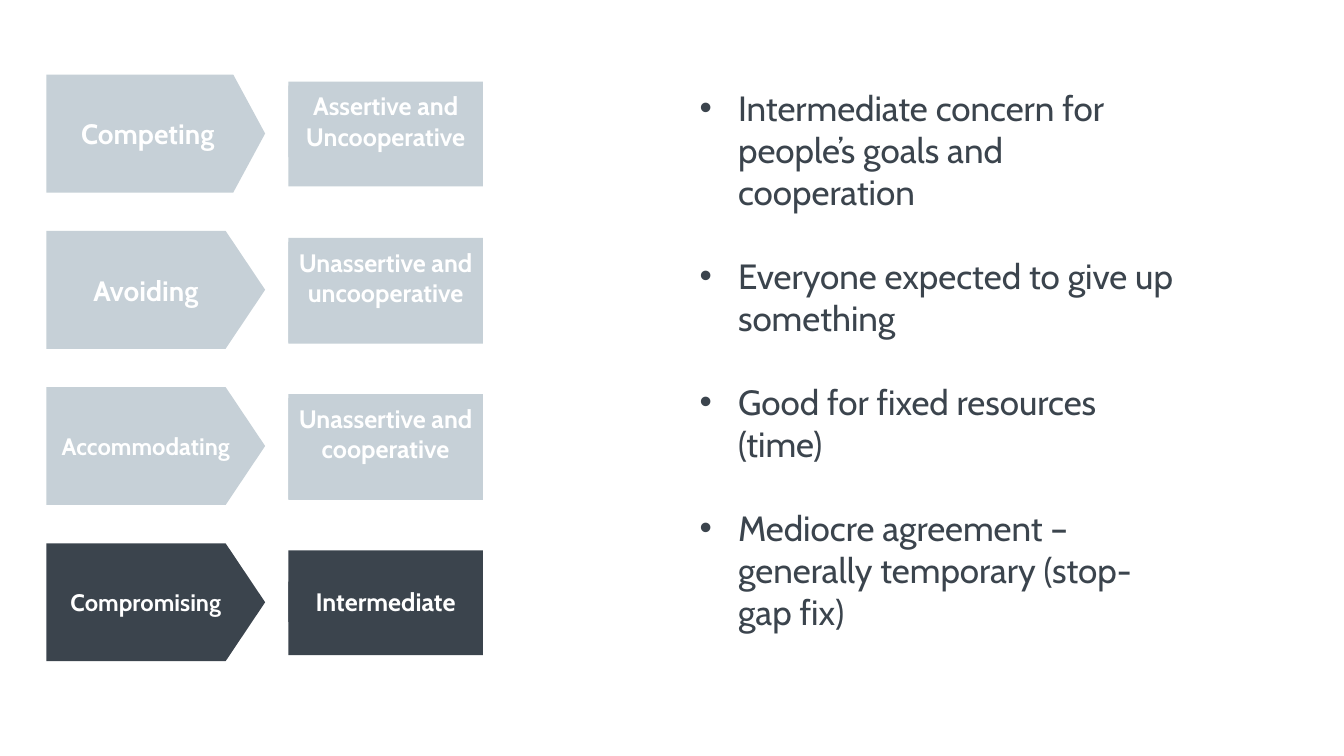
from dataclasses import dataclass

from lxml.etree import SubElement as SubEl
from pptx import Presentation
from pptx.dml.color import RGBColor as Color
from pptx.enum.shapes import MSO_SHAPE as Shape
from pptx.enum.text import MSO_ANCHOR as Anchor, MSO_AUTO_SIZE as Fit, PP_ALIGN as Align
from pptx.oxml.ns import qn
from pptx.util import Inches, Pt


@dataclass(frozen=True)
class Theme:
    font: str = "Cabin"
    pale: str = "C6D0D7"
    dark: str = "3B444D"
    white: str = "FFFFFF"
    large: int = 20
    small: int = 17
    note: int = 18
    list: int = 25
    gap: int = 30


@dataclass(frozen=True)
class Style:
    name: str
    trait: str
    size: int
    fill: str
    point: float = 0.335
    drop: float = 0.11
    tall: float = 1.01


THEME = Theme()
STYLES = [
    Style("Competing", "Assertive and Uncooperative", THEME.large, THEME.pale, point=0.27, tall=0.71),
    Style("Avoiding", "Unassertive and uncooperative", THEME.large, THEME.pale),
    Style("Accommodating", "Unassertive and cooperative", THEME.small, THEME.pale),
    Style("Compromising", "Intermediate", THEME.small, THEME.dark, drop=0.38, tall=0.4),
]
POINTS = [
    "Intermediate concern for people’s goals and cooperation",
    "Everyone expected to give up something",
    "Good for fixed resources (time)",
    "Mediocre agreement – generally temporary (stop-gap fix)",
]
TOP, PITCH = 0.74, 1.55
ARROW_LEFT, ARROW_WIDE, ARROW_TALL = 0.46, 2.17, 1.17
CARD_LEFT, CARD_WIDE, CARD_TALL, CARD_DROP = 2.86, 1.93, 1.04, 0.07
INDENT = 0.38


def add_run(para, text: str, size: int, color: str, bold: bool = False) -> None:
    run = para.add_run()
    run.text = text
    run.font.name = THEME.font
    run.font.size = Pt(size)
    run.font.bold = bold
    run.font.color.rgb = Color.from_string(color)


def add_block(shapes, kind: Shape, left: float, top: float, wide: float, tall: float, fill: str):
    block = shapes.add_shape(kind, Inches(left), Inches(top), Inches(wide), Inches(tall))
    block.shadow.inherit = False
    block.fill.solid()
    block.fill.fore_color.rgb = Color.from_string(fill)
    block.line.fill.background()
    return block


def add_label(block, text: str, size: int, anchor: Anchor) -> None:
    frame = block.text_frame
    frame.word_wrap = True
    frame.vertical_anchor = anchor
    frame.margin_left = frame.margin_right = Inches(0.05)
    para = frame.paragraphs[0]
    para.alignment = Align.CENTER
    add_run(para, text, size, THEME.white, bold=True)


def add_style(shapes, style: Style, top: float) -> None:
    arrow = add_block(shapes, Shape.PENTAGON, ARROW_LEFT, top, ARROW_WIDE, ARROW_TALL, style.fill)
    arrow.adjustments[0] = style.point
    add_label(arrow, style.name, style.size, Anchor.MIDDLE)
    group = shapes.add_group_shape().shapes
    add_block(group, Shape.RECTANGLE, CARD_LEFT, top + CARD_DROP, CARD_WIDE, CARD_TALL, style.fill)
    note = add_block(group, Shape.RECTANGLE, CARD_LEFT, top + style.drop, CARD_WIDE, style.tall, style.fill)
    add_label(note, style.trait, THEME.note, Anchor.TOP)


def fill_list(body, points: list[str]) -> None:
    body.left, body.top = Inches(6.84), Inches(0.81)
    body.width, body.height = Inches(4.97), Inches(5.6)
    frame = body.text_frame
    frame.word_wrap = True
    frame.auto_size = Fit.NONE
    frame.vertical_anchor = Anchor.TOP
    for rank, point in enumerate(points):
        para = frame.add_paragraph() if rank else frame.paragraphs[0]
        para.line_spacing = 1.0
        para.space_before = Pt(THEME.gap if rank else 0)
        para.space_after = Pt(0)
        props = para._p.get_or_add_pPr()
        props.set("marL", str(Inches(INDENT)))
        props.set("indent", str(-Inches(INDENT)))
        SubEl(props, qn("a:buFont"), typeface="Arial")
        SubEl(props, qn("a:buChar"), char="•")
        add_run(para, point, THEME.list, THEME.dark)


def main() -> None:
    deck = Presentation()
    deck.slide_width, deck.slide_height = Inches(13.33), Inches(7.5)
    slide = deck.slides.add_slide(deck.slide_layouts[1])
    title = slide.shapes.title.element
    title.getparent().remove(title)
    fill_list(slide.placeholders[1], POINTS)
    for row, style in enumerate(STYLES):
        add_style(slide.shapes, style, TOP + row * PITCH)
    deck.save("out.pptx")


if __name__ == "__main__":
    main()
